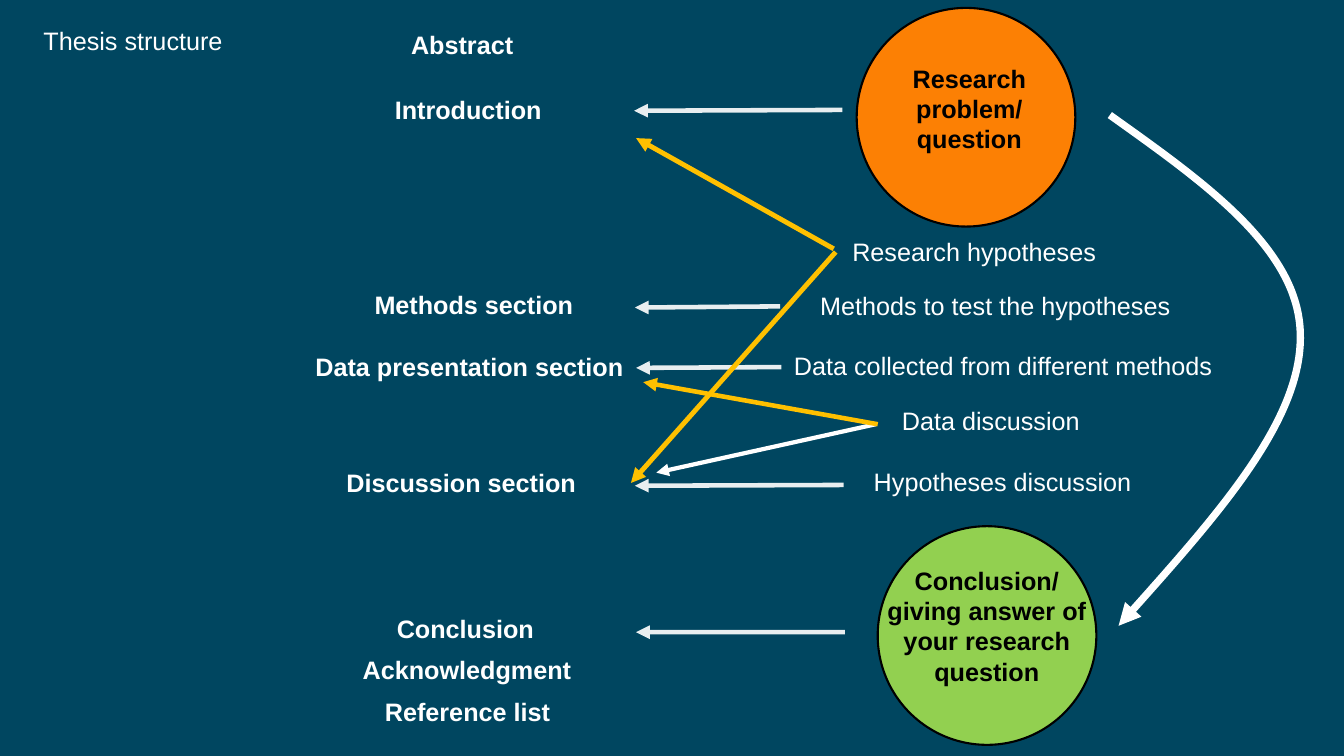
"""Builds the thesis structure slide, linking research steps to thesis sections."""
from lxml.etree import SubElement
from pptx import Presentation
from pptx.dml.color import RGBColor
from pptx.enum.shapes import MSO_CONNECTOR, MSO_SHAPE
from pptx.enum.text import MSO_ANCHOR, MSO_AUTO_SIZE, PP_ALIGN
from pptx.oxml.ns import qn
from pptx.util import Cm, Pt

NAVY = RGBColor(0x00, 0x46, 0x60)
ORANGE = RGBColor(0xFC, 0x80, 0x04)
GREEN = RGBColor(0x92, 0xD0, 0x50)
AMBER = RGBColor(0xFF, 0xC0, 0x00)
WHITE = RGBColor(0xFF, 0xFF, 0xFF)
BLACK = RGBColor(0x00, 0x00, 0x00)

ROW_HEIGHT = 1.02
DIAMETER = 5.51

SECTIONS = [
    ("Abstract", 10.11, 0.61, 3.12),
    ("Introduction", 9.7, 2.26, 4.24),
    ("Methods section", 9.19, 7.16, 5.56),
    ("Data presentation section", 7.7, 8.74, 8.36),
    ("Discussion section", 8.48, 11.66, 6.35),
    ("Conclusion", 9.75, 15.34, 4.01),
    ("Acknowledgment", 8.89, 16.36, 5.82),
    ("Reference list", 9.45, 17.42, 4.72),
]
STEPS = [
    ("Research hypotheses", 21.23, 5.84, 6.71),
    ("Methods to test the hypotheses", 20.42, 7.19, 9.42),
    ("Data collected from different methods", 19.76, 8.71, 11.15),
    ("Data discussion", 22.48, 10.08, 5.03),
    ("Hypotheses discussion", 21.77, 11.63, 7.06),
]
DIRECT_LINKS = [
    (21.23, 2.77, 15.98, 2.79),
    (19.66, 7.72, 16, 7.75),
    (19.69, 9.25, 16.03, 9.27),
    (21.26, 12.22, 16, 12.24),
    (21.29, 15.93, 16.03, 15.93),
]
CROSS_LINKS = [
    ((21.01, 6.27, 16.03, 3.48), AMBER, 3.5),
    ((21.06, 6.35, 15.9, 12.17), AMBER, 3.5),
    ((22.07, 10.69, 16.54, 11.91), WHITE, 3),
    ((22.12, 10.69, 16.21, 9.63), AMBER, 3.25),
]
QUESTION_TO_ANSWER = [
    (27.97, 2.9), (30.35, 4.6), (32.74, 6.27), (32.77, 8.43),
    (32.82, 10.57), (30.51, 13.18), (28.19, 15.77),
]


class Diagram:
    """Holds the text style and the current slide."""

    def __init__(self, slide, font="Arial", size=18):
        self.s, self.font, self.size = slide, font, size

    def fill_text(self, tf, lines, color, bold, align):
        tf.text = "\n".join(lines)
        for p in tf.paragraphs:
            p.alignment = align
            p.font.name, p.font.size = self.font, Pt(self.size)
            p.font.bold, p.font.color.rgb = bold, color

    def title(self, text, x, y, w):
        sp = self.s.shapes.title
        sp.left, sp.top, sp.width, sp.height = Cm(x), Cm(y), Cm(w), Cm(ROW_HEIGHT)
        tf = sp.text_frame
        tf.word_wrap, tf.auto_size = False, MSO_AUTO_SIZE.NONE
        tf.vertical_anchor = MSO_ANCHOR.TOP
        self.fill_text(tf, [text], WHITE, False, PP_ALIGN.LEFT)

    def label(self, text, x, y, w, bold=False):
        tf = self.s.shapes.add_textbox(Cm(x), Cm(y), Cm(w), Cm(ROW_HEIGHT)).text_frame
        tf.word_wrap = False
        self.fill_text(tf, [text], WHITE, bold, PP_ALIGN.LEFT)

    def circle(self, x, y, fill):
        sp = self.s.shapes.add_shape(
            MSO_SHAPE.OVAL, Cm(x), Cm(y), Cm(DIAMETER), Cm(DIAMETER))
        sp.shadow.inherit = False
        sp.fill.solid()
        sp.fill.fore_color.rgb = fill
        sp.line.color.rgb, sp.line.width = BLACK, Pt(1.5)

    def caption(self, lines, x, y, w, h):
        tf = self.s.shapes.add_textbox(Cm(x), Cm(y), Cm(w), Cm(h)).text_frame
        tf.word_wrap = True
        self.fill_text(tf, lines, BLACK, True, PP_ALIGN.CENTER)

    def pointed_line(self, sp, color, width, opacity=100):
        sp.line.color.rgb, sp.line.width = color, Pt(width)
        ln = sp.element.spPr.find(qn("a:ln"))
        if opacity < 100:
            rgb = ln.find(".//" + qn("a:srgbClr"))
            SubElement(rgb, qn("a:alpha"), val=str(opacity * 1000))
        SubElement(ln, qn("a:tailEnd"), type="triangle")

    def arrow(self, ends, color, width, opacity=100):
        sp = self.s.shapes.add_connector(MSO_CONNECTOR.STRAIGHT, *map(Cm, ends))
        self.pointed_line(sp, color, width, opacity)
        SubElement(sp.element.spPr, qn("a:effectLst"))

    def curved_arrow(self, points, color, width):
        start, *rest = [(Cm(x), Cm(y)) for x, y in points]
        builder = self.s.shapes.build_freeform(*start)
        builder.add_line_segments(rest, close=False)
        sp = builder.convert_to_shape()
        sp.shadow.inherit = False
        sp.fill.background()
        outline = sp.element.spPr.find(".//" + qn("a:path"))
        segments = outline.findall(qn("a:lnTo"))
        for i in range(0, len(segments), 3):
            bezier = SubElement(outline, qn("a:cubicBezTo"))
            for segment in segments[i:i + 3]:
                bezier.append(segment[0])
                outline.remove(segment)
        self.pointed_line(sp, color, width)


def main():
    prs = Presentation()
    prs.slide_width, prs.slide_height = Cm(33.87), Cm(19.05)
    s = prs.slides.add_slide(prs.slide_layouts[5])
    s.background.fill.solid()
    s.background.fill.fore_color.rgb = NAVY

    d = Diagram(s)
    d.title("Thesis structure", 0.84, 0.51, 5.08)
    d.circle(21.59, 0.2, ORANGE)
    d.caption(["Research problem/", "question"], 21.56, 1.47, 5.74, 2.57)
    d.circle(22.12, 13.26, GREEN)
    d.caption(["Conclusion/", "giving answer of", "your research", "question"],
              16.74, 14.12, 16.26, 3.33)
    d.curved_arrow(QUESTION_TO_ANSWER, WHITE, 5.25)
    for step in STEPS:
        d.label(*step)
    for section in SECTIONS:
        d.label(*section, bold=True)
    for ends in DIRECT_LINKS:
        d.arrow(ends, WHITE, 3.25, opacity=91)
    for link in CROSS_LINKS:
        d.arrow(*link)
    prs.save("out.pptx")


if __name__ == "__main__":
    main()
